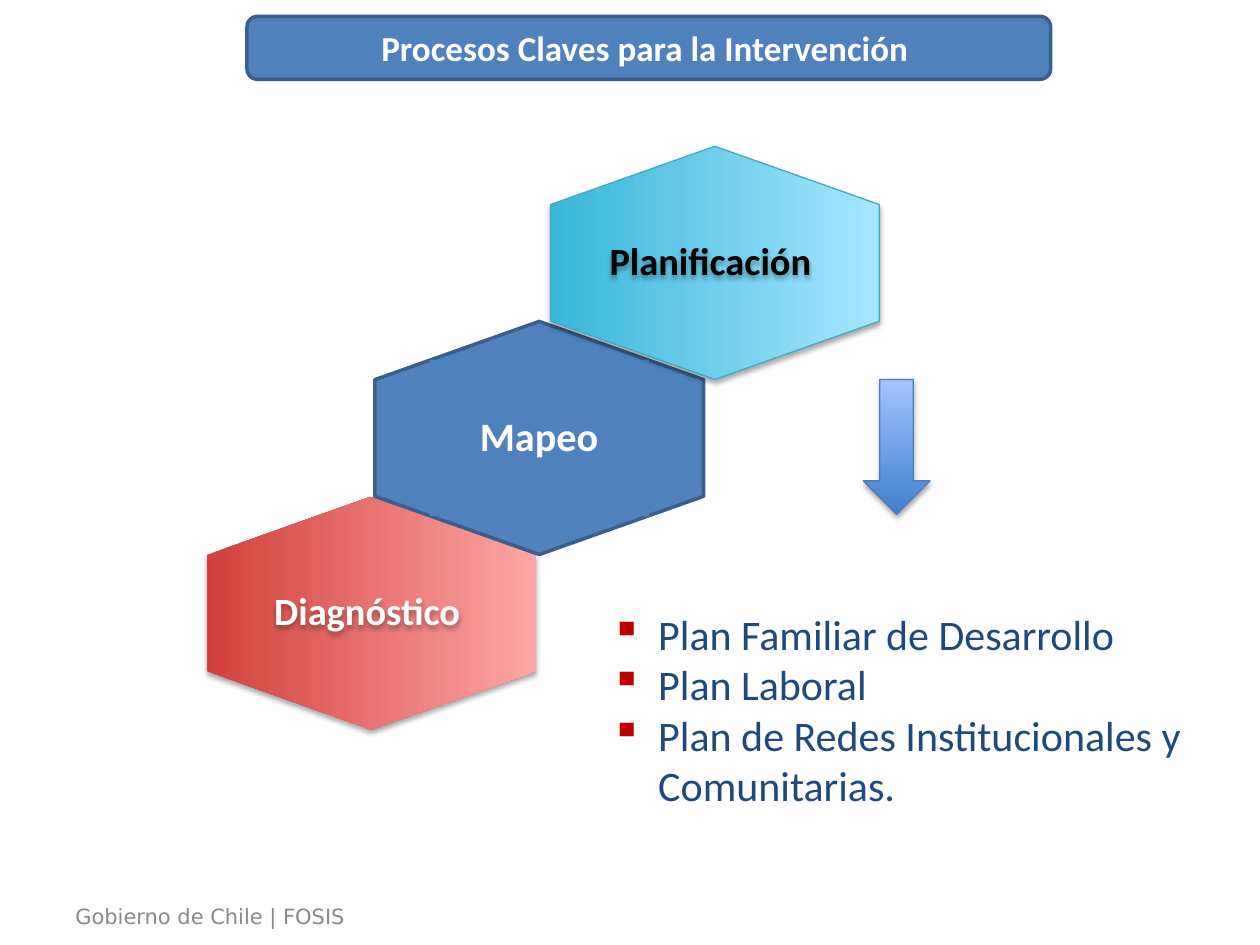
"""Build the slide on the key processes of the intervention."""
from lxml import etree
from pptx import Presentation
from pptx import util as u
from pptx.dml.color import RGBColor
from pptx.enum import shapes, text
from pptx.oxml.ns import qn

WHITE = RGBColor(0xFF, 0xFF, 0xFF)
BLACK = RGBColor(0x00, 0x00, 0x00)
GREY = RGBColor(0x89, 0x89, 0x89)
NAVY = RGBColor(0x1F, 0x49, 0x7D)
BLUE = RGBColor(0x4F, 0x81, 0xBD)
BLUE_EDGE = RGBColor(0x3A, 0x5F, 0x8C)
RED_DARK = RGBColor(0xD1, 0x40, 0x3C)
RED_LIGHT = RGBColor(0xFF, 0xA6, 0xA5)
CYAN_DARK = RGBColor(0x39, 0xB7, 0xD8)
CYAN_LIGHT = RGBColor(0xA7, 0xE6, 0xFF)
CYAN_EDGE = RGBColor(0x46, 0xAA, 0xC5)
ARROW_DARK = RGBColor(0x3F, 0x80, 0xCE)
ARROW_LIGHT = RGBColor(0xA4, 0xC4, 0xFF)
ARROW_EDGE = RGBColor(0x4B, 0x7E, 0xBC)
BULLET = RGBColor(0xC0, 0x00, 0x00)


def style(sp, colors, edge=None, width=0.75, shadow=False):
    if len(colors) == 2:
        sp.fill.gradient()
        sp.fill.gradient_angle = 90
        for stop, color, pos in zip(sp.fill.gradient_stops, colors, (0, 1)):
            stop.color.rgb = color
            stop.position = pos
    elif colors:
        sp.fill.solid()
        sp.fill.fore_color.rgb = colors[0]
    else:
        sp.fill.background()
    if edge:
        sp.line.color.rgb = edge
        sp.line.width = u.Pt(width)
    else:
        sp.line.fill.background()
    sp.shadow.inherit = False
    if shadow:
        effects = sp._element.spPr.find(qn("a:effectLst"))
        outer = etree.SubElement(effects, qn("a:outerShdw"), blurRad=str(u.Pt(3.1)),
                                 dist=str(u.Pt(1.8)), dir="5400000", rotWithShape="0")
        color = etree.SubElement(outer, qn("a:srgbClr"), val=str(BLACK))
        etree.SubElement(color, qn("a:alpha"), val="35000")


def write(tf, lines, size, color, bold=False, align=None, font="Calibri"):
    for i, line in enumerate(lines):
        p = tf.add_paragraph() if i else tf.paragraphs[0]
        p.text = line
        p.alignment = align
        f = p.runs[0].font
        f.name, f.size, f.bold = font, u.Pt(size), bold
        f.color.rgb = color


prs = Presentation()
prs.slide_width, prs.slide_height = u.Cm(25.4), u.Cm(19.05)
s = prs.slides.add_slide(prs.slide_layouts[6])
CENTER = text.PP_ALIGN.CENTER
MIDDLE = text.MSO_ANCHOR.MIDDLE

footer = s.shapes.add_textbox(u.Cm(1.27), u.Cm(18.08), u.Cm(6.17), u.Cm(0.76))
footer.text_frame.word_wrap = False
write(footer.text_frame, ["Gobierno de Chile | FOSIS"], 12, GREY, font="DejaVu Sans")

title = s.shapes.add_shape(shapes.MSO_SHAPE.ROUNDED_RECTANGLE,
                           u.Cm(4.98), u.Cm(0.33), u.Cm(16.2), u.Cm(1.27))
style(title, [BLUE], BLUE_EDGE, 2)
title.text_frame.vertical_anchor = MIDDLE
write(title.text_frame, ["Procesos Claves para la Intervención "], 20, WHITE, True, CENTER)

HEX_W, HEX_H, LABEL_H = 4.7, 6.63, 3.15
steps = [
    ("Diagnóstico ", 7.49, [RED_DARK, RED_LIGHT], None, 0.75, [], 6.6, 22, WHITE),
    ("Mapeo", 10.87, [BLUE], BLUE_EDGE, 2, [BLUE], 4.42, 23, WHITE),
    ("Planificación ", 14.41, [CYAN_DARK, CYAN_LIGHT], CYAN_EDGE, 0.75, [], 6.6, 22, BLACK),
]
for i, (name, cx, colors, edge, width, back, label_w, size, color) in enumerate(steps):
    cy = 12.36 - 3.53 * i
    sp = s.shapes.add_shape(shapes.MSO_SHAPE.HEXAGON, u.Cm(cx - HEX_W / 2),
                            u.Cm(cy - HEX_H / 2), u.Cm(HEX_W), u.Cm(HEX_H))
    sp.rotation = 90
    raised = len(colors) == 2
    style(sp, colors, edge, width, raised)

    label = s.shapes.add_textbox(u.Cm(cx - label_w / 2), u.Cm(cy - LABEL_H / 2),
                                 u.Cm(label_w), u.Cm(LABEL_H))
    style(label, back, shadow=raised)
    tf = label.text_frame
    tf.word_wrap = True
    tf.vertical_anchor = MIDDLE
    tf.margin_left = tf.margin_right = tf.margin_top = tf.margin_bottom = u.Cm(0.15)
    write(tf, [name], size, color, True, CENTER)
    tf.paragraphs[0].line_spacing = 0.9
    tf.paragraphs[0].space_after = u.Pt(8)

plans = s.shapes.add_textbox(u.Cm(12.07), u.Cm(12.14), u.Cm(13.33), u.Cm(4.37))
tf = plans.text_frame
tf.word_wrap = True
write(tf, ["Plan Familiar de Desarrollo", "Plan Laboral",
           "Plan de Redes Institucionales y Comunitarias."], 24, NAVY)
for p in tf.paragraphs:
    pPr = p._p.get_or_add_pPr()
    pPr.set("marL", str(u.Cm(0.95)))
    pPr.set("indent", str(-u.Cm(0.95)))
    bullet_color = etree.SubElement(pPr, qn("a:buClr"))
    etree.SubElement(bullet_color, qn("a:srgbClr"), val=str(BULLET))
    etree.SubElement(pPr, qn("a:buChar"), char="▪")

arrow = s.shapes.add_shape(shapes.MSO_SHAPE.DOWN_ARROW,
                           u.Cm(17.4), u.Cm(7.65), u.Cm(1.35), u.Cm(2.72))
style(arrow, [ARROW_DARK, ARROW_LIGHT], ARROW_EDGE, shadow=True)

prs.save("out.pptx")
